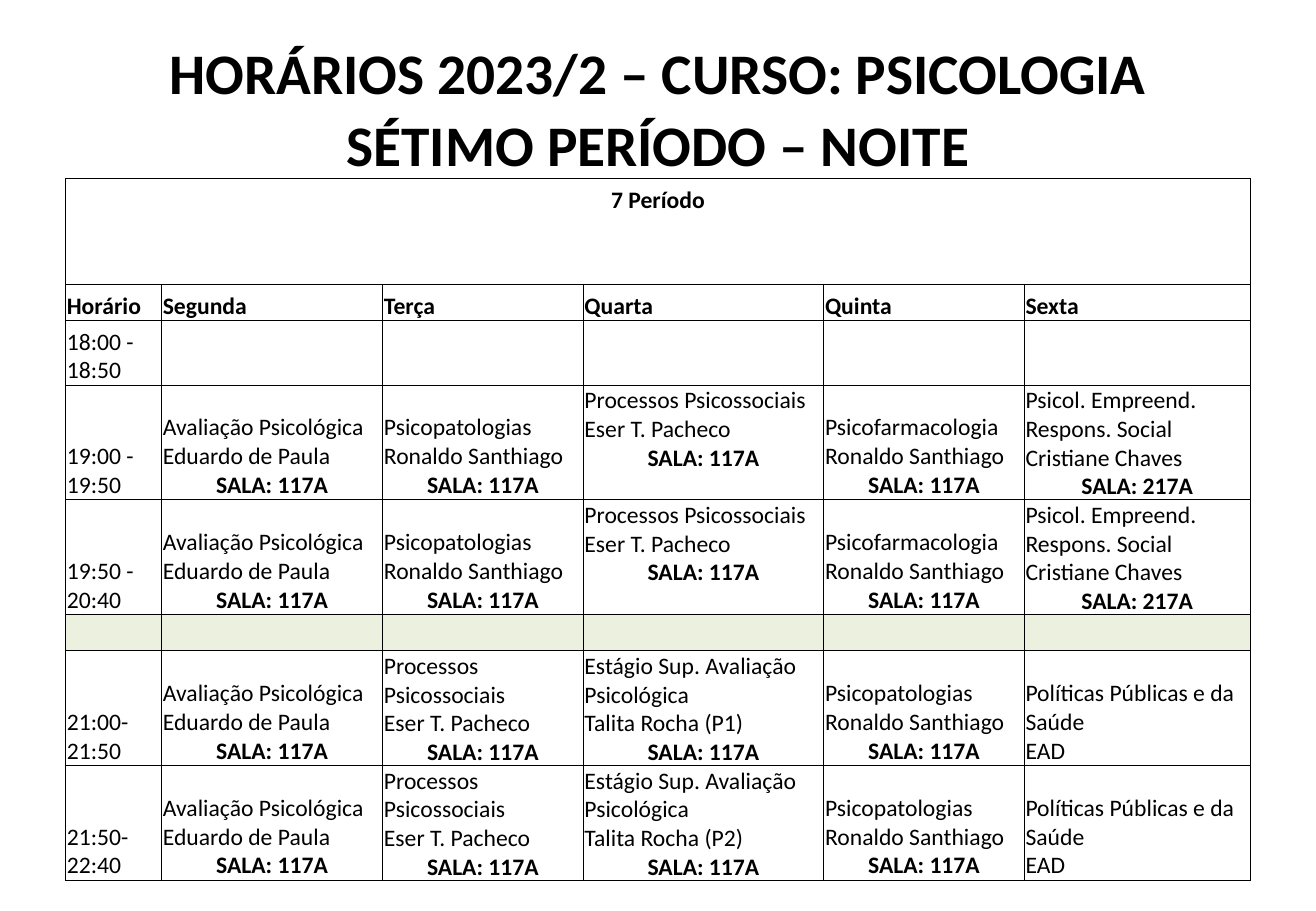
from dataclasses import dataclass

from lxml import etree
from pptx import Presentation, util as u
from pptx.dml.color import RGBColor
from pptx.enum import text as t
from pptx.oxml import ns


@dataclass(frozen=True)
class Theme:
    font: str = "Calibri"
    ink: str = "000000"
    break_fill: str = "EBF1DE"
    title_size: float = 34
    body_size: float = 14
    border_width: float = 0.5


@dataclass(frozen=True)
class Lesson:
    subject: str
    teacher: str
    room: str = ""
    anchor: t.MSO_ANCHOR = t.MSO_ANCHOR.BOTTOM


THEME = Theme()
TOP = t.MSO_ANCHOR.TOP
BOTTOM = t.MSO_ANCHOR.BOTTOM
LEFT = t.PP_ALIGN.LEFT
CENTER = t.PP_ALIGN.CENTER
TIGHT = (0.01, 0.01, 0.01, 0)

# Timetable content
TITLE = ("HORÁRIOS 2023/2 – CURSO: PSICOLOGIA", "SÉTIMO PERÍODO – NOITE")
PERIOD = "7 Período"
HEADINGS = ("Horário", "Segunda", "Terça", "Quarta", "Quinta", "Sexta")

ASSESSMENT = Lesson("Avaliação Psicológica", "Eduardo de Paula", "117A")
PATHOLOGY = Lesson("Psicopatologias", "Ronaldo Santhiago", "117A")
PSYCHOSOCIAL = Lesson("Processos Psicossociais", "Eser T. Pacheco", "117A", TOP)
PHARMACOLOGY = Lesson("Psicofarmacologia", "Ronaldo Santhiago", "117A")
ENTERPRISE = Lesson("Psicol. Empreend. Respons. Social", "Cristiane Chaves", "217A", TOP)
POLICY = Lesson("Políticas Públicas e da Saúde", "EAD")


def late_lessons(group: str) -> tuple[Lesson, ...]:
    internship = Lesson("Estágio Sup. Avaliação Psicológica", f"Talita Rocha ({group})", "117A")
    return ASSESSMENT, PSYCHOSOCIAL, internship, PATHOLOGY, POLICY


EARLY_LESSONS = (ASSESSMENT, PATHOLOGY, PSYCHOSOCIAL, PHARMACOLOGY, ENTERPRISE)
SCHEDULE = (
    ("18:00 - 18:50", ()),
    ("19:00 - 19:50", EARLY_LESSONS),
    ("19:50 - 20:40", EARLY_LESSONS),
    ("", ()),
    ("21:00-21:50", late_lessons("P1")),
    ("21:50-22:40", late_lessons("P2")),
)
COLUMN_WIDTHS = (0.79, 1.82, 1.65, 1.98, 1.65, 1.86)
ROW_HEIGHTS = (0.87, 0.3, 0.53, 0.76, 0.76, 0.3, 0.76, 0.76)
FIRST_SLOT_ROW = 2


def write(frame, content: str, *, size: float = THEME.body_size, bold: bool = False,
          align: t.PP_ALIGN = LEFT, line_spacing: float | None = None,
          space_after: float | None = None) -> None:
    """Write one paragraph, filling the empty first one before adding more."""
    first = frame.paragraphs[0]
    paragraph = frame.add_paragraph() if first.runs else first
    paragraph.text = content
    paragraph.alignment = align
    if line_spacing is not None:
        paragraph.line_spacing = line_spacing
    if space_after is not None:
        paragraph.space_after = u.Pt(space_after)
    for run in paragraph.runs:
        run.font.name = THEME.font
        run.font.size = u.Pt(size)
        run.font.bold = bold
        run.font.color.rgb = RGBColor.from_string(THEME.ink)
    if not content:  # an empty cell must not outgrow its row
        end = etree.SubElement(paragraph._p, ns.qn("a:endParaRPr"))
        end.set("sz", str(int(size * 100)))


def style_cell(cell, *, anchor: t.MSO_ANCHOR = BOTTOM, fill: str = "",
               insets: tuple[float, ...] = TIGHT) -> None:
    cell.vertical_anchor = anchor
    (cell.margin_left, cell.margin_top,
     cell.margin_right, cell.margin_bottom) = map(u.Inches, insets)
    # Borders come before the fill in the cell properties
    properties = cell._tc.get_or_add_tcPr()
    for side in ("lnL", "lnR", "lnT", "lnB"):
        line = etree.SubElement(properties, ns.qn(f"a:{side}"), w=str(u.Pt(THEME.border_width)))
        solid = etree.SubElement(line, ns.qn("a:solidFill"))
        etree.SubElement(solid, ns.qn("a:srgbClr"), val=THEME.ink)
    if fill:
        cell.fill.solid()
        cell.fill.fore_color.rgb = RGBColor.from_string(fill)
    else:
        cell.fill.background()


def add_title(slide) -> None:
    title = slide.shapes.add_textbox(*map(u.Inches, (0.54, 0.3, 9.75, 1.25))).text_frame
    title.word_wrap = True
    title.vertical_anchor = t.MSO_ANCHOR.MIDDLE
    for line in TITLE:
        write(title, line, size=THEME.title_size, bold=True, align=CENTER,
              line_spacing=0.9, space_after=6)


def write_lesson(cell, lesson: Lesson) -> None:
    style_cell(cell, anchor=lesson.anchor)
    write(cell.text_frame, f"{lesson.subject}\v{lesson.teacher}")
    if lesson.room:
        write(cell.text_frame, f"SALA: {lesson.room}", bold=True, align=CENTER)


def add_timetable(slide) -> None:
    timetable = slide.shapes.add_table(
        len(ROW_HEIGHTS), len(COLUMN_WIDTHS), u.Inches(0.54), u.Inches(1.47),
        u.Inches(sum(COLUMN_WIDTHS)), u.Inches(sum(ROW_HEIGHTS))).table
    timetable.first_row = timetable.horz_banding = False
    for column, width in zip(timetable.columns, COLUMN_WIDTHS):
        column.width = u.Inches(width)
    for row, height in zip(timetable.rows, ROW_HEIGHTS):
        row.height = u.Inches(height)

    # Period banner across all columns
    banner = timetable.cell(0, 0)
    banner.merge(timetable.cell(0, len(HEADINGS) - 1))
    for column in range(len(HEADINGS)):
        style_cell(timetable.cell(0, column), anchor=TOP, insets=(0.13, 0.06, 0.13, 0.06))
    write(banner.text_frame, PERIOD, bold=True, align=CENTER)

    # Weekday headings
    for column, heading in enumerate(HEADINGS):
        cell = timetable.cell(1, column)
        style_cell(cell)
        write(cell.text_frame, heading, bold=True)

    # Time slots; the one without a time is the shaded break
    for row, (hours, lessons) in enumerate(SCHEDULE, FIRST_SLOT_ROW):
        for column in range(len(HEADINGS)):
            cell = timetable.cell(row, column)
            if column and lessons:
                write_lesson(cell, lessons[column - 1])
            else:
                style_cell(cell, fill="" if hours else THEME.break_fill)
                write(cell.text_frame, "" if column else hours)


def main() -> None:
    deck = Presentation()
    deck.slide_width, deck.slide_height = u.Inches(10.83), u.Inches(7.5)
    slide = deck.slides.add_slide(deck.slide_layouts[6])
    add_title(slide)
    add_timetable(slide)
    deck.save("out.pptx")


if __name__ == "__main__":
    main()
